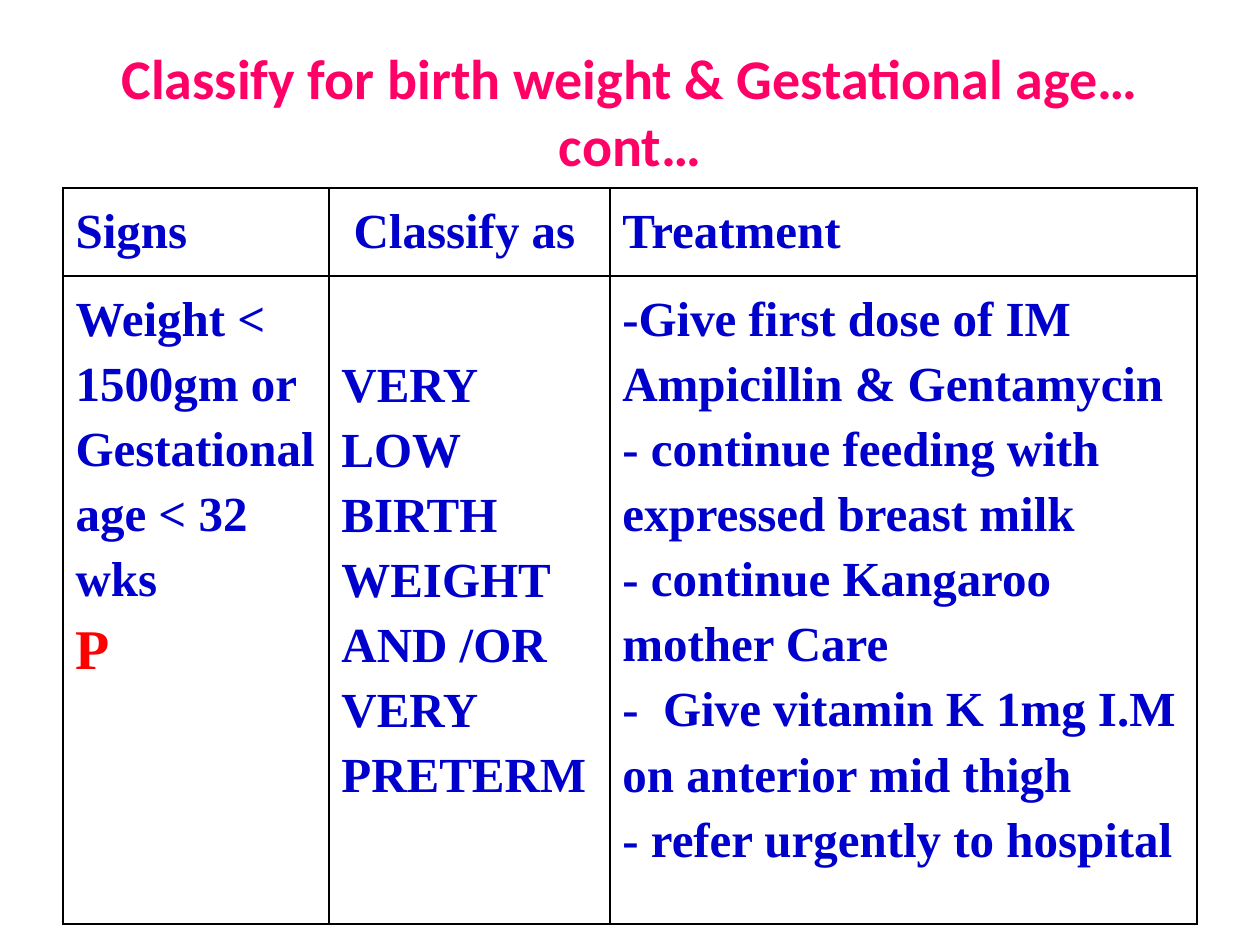
from dataclasses import dataclass

from lxml.etree import SubElement
from pptx import Presentation
from pptx.dml.color import RGBColor
from pptx.enum.text import MSO_ANCHOR, PP_ALIGN
from pptx.oxml.ns import qn
from pptx.util import Inches, Pt


@dataclass(frozen=True)
class Theme:
    title_font: str = "Calibri"
    body_font: str = "Times New Roman"
    title: str = "FF0066"
    body: str = "0000CC"
    accent: str = "FF0000"
    border: str = "000000"
    large: int = 32
    normal: int = 28
    border_width: int = 1


THEME = Theme()
TITLE_STYLE = {"name": THEME.title_font, "size": Pt(THEME.large),
               "bold": True, "color": THEME.title}
BODY_STYLE = {"name": THEME.body_font, "size": Pt(THEME.normal),
              "bold": True, "color": THEME.body}
ACCENT_STYLE = {**BODY_STYLE, "size": Pt(THEME.large), "color": THEME.accent}

TITLE = "Classify for birth weight & Gestational age…cont…"
COLUMN_WIDTHS = (2.11, 2.23, 4.66)
ROW_HEIGHTS = (0.7, 4.75)
CLASS_TOP_MARGIN = 0.57
MARKER = "P"
ROWS = (
    (("Signs",), (" Classify as",), ("Treatment",)),
    (
        ("Weight < 1500gm or", "Gestational age < 32 wks", MARKER),
        ("VERY LOW BIRTH WEIGHT AND /OR", "VERY PRETERM"),
        (
            "-Give first dose of IM Ampicillin & Gentamycin",
            "- continue feeding with expressed breast milk",
            "- continue Kangaroo mother Care",
            "-  Give vitamin K 1mg I.M on anterior mid thigh",
            "- refer urgently to hospital",
        ),
    ),
)


def add_run(p, text, style):
    r = p.add_run()
    r.text = text
    for key, value in style.items():
        if key == "color":
            r.font.color.rgb = RGBColor.from_string(value)
        else:
            setattr(r.font, key, value)


def add_title(s):
    sp = s.shapes.add_textbox(Inches(0.5), Inches(0.25), Inches(9), Inches(1.25))
    tf = sp.text_frame
    tf.word_wrap = True
    tf.vertical_anchor = MSO_ANCHOR.MIDDLE
    p = tf.paragraphs[0]
    p.alignment = PP_ALIGN.CENTER
    add_run(p, TITLE, TITLE_STYLE)


def set_borders(cell):
    tc_pr = cell._tc.get_or_add_tcPr()
    for i, side in enumerate(("lnL", "lnR", "lnT", "lnB")):
        ln = tc_pr.makeelement(qn(f"a:{side}"), {"w": str(Pt(THEME.border_width))})
        fill = SubElement(ln, qn("a:solidFill"))
        SubElement(fill, qn("a:srgbClr"), {"val": THEME.border})
        tc_pr.insert(i, ln)


def fill_cell(cell, lines):
    cell.fill.background()
    set_borders(cell)
    tf = cell.text_frame
    for i, line in enumerate(lines):
        p = tf.add_paragraph() if i else tf.paragraphs[0]
        p.line_spacing = 1.2
        add_run(p, line, ACCENT_STYLE if line == MARKER else BODY_STYLE)


def add_classification_table(s):
    table = s.shapes.add_table(
        len(ROWS), len(COLUMN_WIDTHS), Inches(0.5), Inches(1.49),
        Inches(sum(COLUMN_WIDTHS)), Inches(sum(ROW_HEIGHTS))).table
    table.first_row = table.horz_banding = False
    for column, width in zip(table.columns, COLUMN_WIDTHS):
        column.width = Inches(width)
    for row, height, contents in zip(table.rows, ROW_HEIGHTS, ROWS):
        row.height = Inches(height)
        for cell, lines in zip(row.cells, contents):
            fill_cell(cell, lines)
    table.cell(1, 1).margin_top = Inches(CLASS_TOP_MARGIN)


def main():
    prs = Presentation()
    prs.slide_width, prs.slide_height = Inches(10), Inches(7.5)
    s = prs.slides.add_slide(prs.slide_layouts[6])
    add_title(s)
    add_classification_table(s)
    prs.save("out.pptx")


if __name__ == "__main__":
    main()
